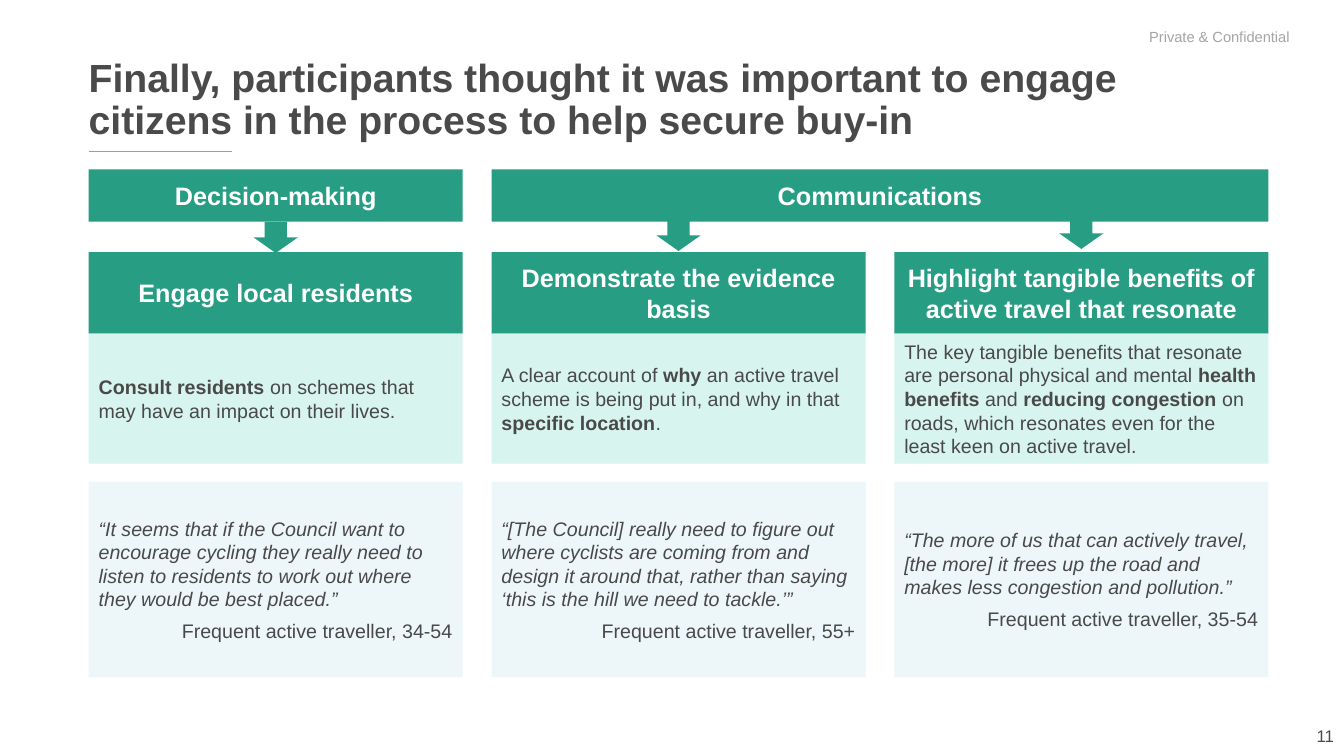
from dataclasses import dataclass

from pptx import Presentation
from pptx.dml.color import RGBColor
from pptx.enum.shapes import MSO_CONNECTOR, MSO_SHAPE
from pptx.enum.text import MSO_ANCHOR, PP_ALIGN
from pptx.oxml.ns import qn
from pptx.util import Inches, Pt


@dataclass(frozen=True)
class Theme:
    font: str = "Arial"
    text: str = "494949"
    title: str = "4A4A4A"
    muted: str = "A4A4A4"
    white: str = "FFFFFF"
    green: str = "279D83"
    mint: str = "D7F5EE"
    ice: str = "EDF7F9"
    accent: str = "37CEAC"
    title_size: float = 28
    head_size: float = 18
    body_size: float = 14
    page_size: float = 12
    label_size: float = 10.5


T = Theme()
LEFT, COL_W, COL_STEP = 0.88, 3.71, 3.995
ARROW_W, ARROW_H = 0.44, 0.31

# Each column: arrow top, heading, message runs as (text, bold), quote, speaker
COLUMNS = [
    (2.2, "Engage local residents",
     [("Consult residents", True),
      (" on schemes that may have an impact on their lives.", False)],
     "“It seems that if the Council want to encourage cycling they really need "
     "to listen to residents to work out where they would be best placed.”",
     "Frequent active traveller, 34-54"),
    (2.18, "Demonstrate the evidence basis",
     [("A clear account of ", False), ("why", True),
      (" an active travel scheme is being put in, and why in that ", False),
      ("specific location", True), (".", False)],
     "“[The Council] really need to figure out where cyclists are coming from and "
     "design it around that, rather than saying ‘this is the hill we need to tackle.’”",
     "Frequent active traveller, 55+"),
    (2.16, "Highlight tangible benefits of active travel that resonate",
     [("The key tangible benefits that resonate are personal physical and mental ", False),
      ("health benefits ", True), ("and ", False), ("reducing congestion ", True),
      ("on roads, which resonates even for the least keen on active travel.", False)],
     "“The more of us that can actively travel, [the more] it frees up the road and "
     "makes less congestion and pollution.”",
     "Frequent active traveller, 35-54"),
]


def add_run(p, text, size=T.body_size, color=T.text, bold=False, italic=False):
    r = p.add_run()
    r.text = text
    f = r.font
    f.name, f.size, f.bold, f.italic = T.font, Pt(size), bold, italic
    f.color.rgb = RGBColor.from_string(color)


def add_block(slide, box, fill, kind=MSO_SHAPE.RECTANGLE):
    sp = slide.shapes.add_shape(kind, *map(Inches, box))
    sp.shadow.inherit = False
    sp.fill.solid()
    sp.fill.fore_color.rgb = RGBColor.from_string(fill)
    sp.line.fill.background()
    tf = sp.text_frame
    tf.word_wrap = True
    tf.vertical_anchor = MSO_ANCHOR.MIDDLE
    tf.paragraphs[0].alignment = PP_ALIGN.LEFT
    return tf


def add_heading(slide, box, text):
    p = add_block(slide, box, T.green).paragraphs[0]
    p.alignment = PP_ALIGN.CENTER
    add_run(p, text, size=T.head_size, color=T.white, bold=True)


def add_textbox(slide, box, anchor):
    tf = slide.shapes.add_textbox(*map(Inches, box)).text_frame
    tf.word_wrap = True
    tf.vertical_anchor = anchor
    return tf


def add_frame(slide):
    # Page number
    p = add_textbox(slide, (10.33, 7.1, 3, 0.4), MSO_ANCHOR.MIDDLE).paragraphs[0]
    p.alignment = PP_ALIGN.RIGHT
    add_run(p, "11", size=T.page_size, color=T.title)

    # Confidentiality label
    tf = add_block(slide, (11.3, 0.19, 1.63, 0.35), T.white)
    add_run(tf.paragraphs[0], "Private & Confidential", size=T.label_size, color=T.muted)

    # Title and its rule
    tf = add_textbox(slide, (LEFT, 0.53, 11.7, 0.87), MSO_ANCHOR.TOP)
    tf.margin_left = 0
    tf.paragraphs[0].line_spacing = 0.9
    add_run(tf.paragraphs[0],
            "Finally, participants thought it was important to engage citizens "
            "in the process to help secure buy-in",
            size=T.title_size, color=T.title, bold=True)
    rule = slide.shapes.add_connector(
        MSO_CONNECTOR.STRAIGHT, *map(Inches, (LEFT, 1.5, 2.3, 1.5)))
    rule.line.color.rgb = RGBColor.from_string(T.accent)
    rule.line.width = Pt(1)
    sp_pr = rule._element.spPr
    sp_pr.append(sp_pr.makeelement(qn("a:effectLst"), {}))


def add_column(slide, box, arrow_top, heading, message, quote, speaker):
    x, y, w, h = box
    add_heading(slide, (x, y, w, 0.81), heading)

    # Message
    p = add_block(slide, (x, y + 0.81, w, 1.29), T.mint).paragraphs[0]
    for text, bold in message:
        add_run(p, text, bold=bold)

    # Quote and speaker
    tf = add_block(slide, (x, y + 2.28, w, h - 2.28), T.ice)
    p = tf.paragraphs[0]
    p.space_after = Pt(6)
    add_run(p, quote, italic=True)
    p = tf.add_paragraph()
    p.alignment = PP_ALIGN.RIGHT
    p.space_after = Pt(6)
    add_run(p, speaker)

    # Arrow from the theme above
    add_block(slide, (x + (w - ARROW_W) / 2, arrow_top, ARROW_W, ARROW_H),
              T.green, MSO_SHAPE.DOWN_ARROW)


def main():
    prs = Presentation()
    prs.slide_width, prs.slide_height = Inches(13.33), Inches(7.5)
    slide = prs.slides.add_slide(prs.slide_layouts[6])
    add_frame(slide)

    # Themes: the second spans two columns
    add_heading(slide, (LEFT, 1.68, COL_W, 0.52), "Decision-making")
    add_heading(slide, (LEFT + COL_STEP, 1.68, COL_STEP + COL_W, 0.52), "Communications")

    for i, column in enumerate(COLUMNS):
        add_column(slide, (LEFT + i * COL_STEP, 2.5, COL_W, 4.22), *column)

    prs.save("out.pptx")


if __name__ == "__main__":
    main()
